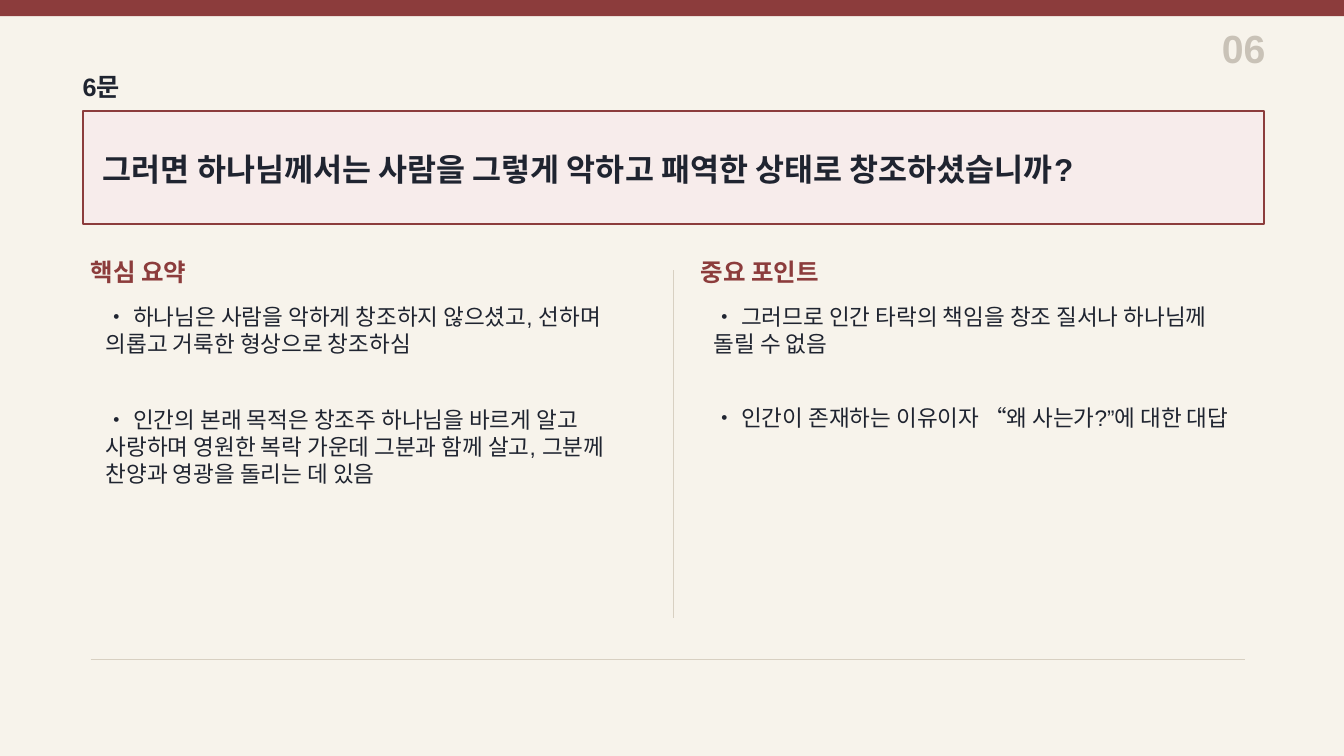
import pptx
import pptx.dml.color
import pptx.enum.shapes
import pptx.enum.text
import pptx.oxml.ns
import pptx.util
from lxml import etree

SLIDE_NUMBER = "06"
QUESTION_LABEL = "6문"
QUESTION = "그러면 하나님께서는 사람을 그렇게 악하고 패역한 상태로 창조하셨습니까?"
# heading, heading left, heading width, points left, step between points, points
COLUMNS = [
    ("핵심 요약", 0.9, 2.4, 0.95, 1.02, [
        "하나님은 사람을 악하게 창조하지 않으셨고, 선하며 의롭고 거룩한 형상으로 창조하심",
        "인간의 본래 목적은 창조주 하나님을 바르게 알고 사랑하며 영원한 복락 가운데 "
        "그분과 함께 살고, 그분께 찬양과 영광을 돌리는 데 있음",
    ]),
    ("중요 포인트", 6.95, 3, 6.98, 1, [
        "그러므로 인간 타락의 책임을 창조 질서나 하나님께 돌릴 수 없음",
        "인간이 존재하는 이유이자 “왜 사는가?”에 대한 대답",
    ]),
]
COLORS = {
    "paper": "F7F3EB", "accent": "8C3C3C", "panel": "F7ECEB",
    "ink": "1F2430", "number": "C9C2B7", "rule": "D8D0C2",
}
FONT = "Arial"
WIDTH, HEIGHT = 13.33, 7.5
MARGIN, PANEL_WIDTH = 0.82, 11.72
HEADING_TOP, POINTS_TOP = 2.58, 2.96
POINT_WIDTH, POINT_HEIGHT = 5.38, 0.84

Inches = pptx.util.Inches
Align = pptx.enum.text.PP_ALIGN
Anchor = pptx.enum.text.MSO_ANCHOR


def color(name):
    return pptx.dml.color.RGBColor.from_string(COLORS[name])


def add_box(slide, left, top, width, height, fill, line=None):
    shape = slide.shapes.add_shape(
        pptx.enum.shapes.MSO_SHAPE.RECTANGLE,
        Inches(left), Inches(top), Inches(width), Inches(height))
    shape.shadow.inherit = False
    shape.fill.solid()
    shape.fill.fore_color.rgb = color(fill)
    if line:
        shape.line.color.rgb = color(line)
        shape.line.width = pptx.util.Pt(1.2)
    else:
        shape.line.fill.background()


def add_text(slide, text, left, top, width, height, size, ink="ink",
             bold=True, align=Align.LEFT, anchor=Anchor.MIDDLE, insets=(0, 0)):
    """Add a one-paragraph text box; insets are (horizontal, vertical)."""
    box = slide.shapes.add_textbox(
        Inches(left), Inches(top), Inches(width), Inches(height))
    frame = box.text_frame
    frame.word_wrap = True
    frame.vertical_anchor = anchor
    frame.margin_left = frame.margin_right = Inches(insets[0])
    frame.margin_top = frame.margin_bottom = Inches(insets[1])
    paragraph = frame.paragraphs[0]
    paragraph.text = text
    paragraph.alignment = align
    paragraph.font.name = FONT
    paragraph.font.size = pptx.util.Pt(size)
    paragraph.font.bold = bold
    paragraph.font.color.rgb = color(ink)


def add_rule(slide, x1, y1, x2, y2):
    rule = slide.shapes.add_connector(
        pptx.enum.shapes.MSO_CONNECTOR.STRAIGHT,
        Inches(x1), Inches(y1), Inches(x2), Inches(y2))
    rule.line.color.rgb = color("rule")
    rule.line.width = pptx.util.Pt(1)
    etree.SubElement(rule._element.spPr, pptx.oxml.ns.qn("a:effectLst"))


def main():
    presentation = pptx.Presentation()
    presentation.slide_width = Inches(WIDTH)
    presentation.slide_height = Inches(HEIGHT)
    slide = presentation.slides.add_slide(presentation.slide_layouts[6])
    slide.background.fill.solid()
    slide.background.fill.fore_color.rgb = color("paper")

    add_box(slide, 0, 0, WIDTH, 0.16, "accent")
    add_text(slide, SLIDE_NUMBER, 11.55, 0.22, 1, 0.5, 28, "number", align=Align.RIGHT)
    add_text(slide, QUESTION_LABEL, MARGIN, 0.72, 0.9, 0.28, 18)
    add_box(slide, MARGIN, 1.1, PANEL_WIDTH, 1.12, "panel", "accent")
    add_text(slide, QUESTION, MARGIN + 0.2, 1.34, 11.28, 0.68, 22.5)

    for heading, left, width, points_left, step, points in COLUMNS:
        add_text(slide, heading, left, HEADING_TOP, width, 0.24, 17.5, "accent")
        for row, point in enumerate(points):
            add_text(slide, f"• {point}", points_left, POINTS_TOP + row * step,
                     POINT_WIDTH, POINT_HEIGHT, 16.1, bold=False,
                     anchor=Anchor.TOP, insets=(0.1, 0.05))

    add_rule(slide, 6.68, 2.68, 6.68, 6.13)
    add_rule(slide, 0.9, 6.54, 12.35, 6.54)
    presentation.save("out.pptx")


if __name__ == "__main__":
    main()
